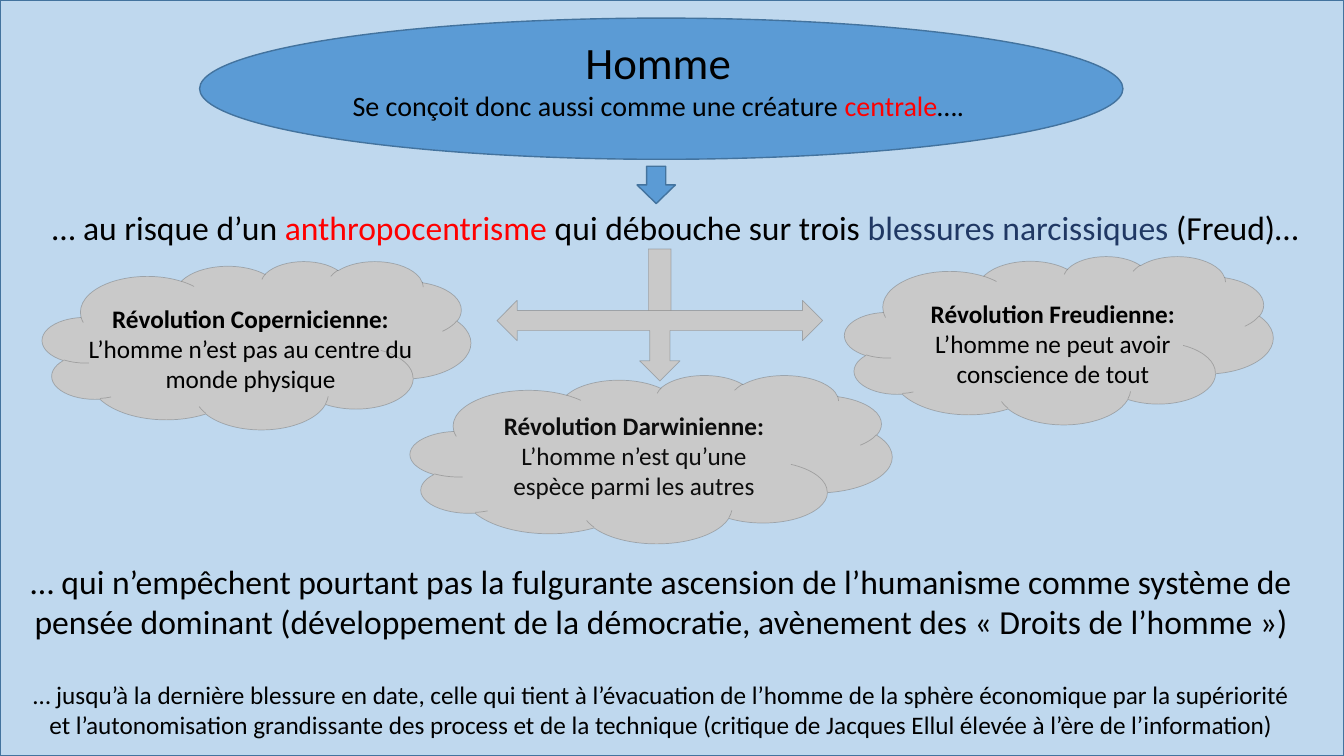
from lxml import etree
from pptx import Presentation
from pptx.dml.color import RGBColor
from pptx.enum.shapes import MSO_SHAPE as Preset
from pptx.enum.text import MSO_ANCHOR as Anchor, MSO_AUTO_SIZE as AutoSize, PP_ALIGN as Align
from pptx.oxml.ns import qn
from pptx.util import Inches, Pt

WIDTH, HEIGHT = Inches(13.33), Inches(7.5)
FONT = "Calibri"
COLORS = {
    "blue": "5B9BD5", "blue line": "43739E", "grey": "C9C9C9", "grey line": "595959",
    "black": "000000", "soft black": "0D0D0D", "red": "FF0000", "navy": "203864",
}
BLUE = ("blue", "blue line", 1)
GREY = ("grey", "grey line", 0.5)
CLOUD_HEIGHT = 22.27
LABEL_OFFSET = (2.63, 4.93)
LABEL_SIZE = (25.73, 13.47)


def color(name):
    return RGBColor.from_string(COLORS[name])


def box(left, top, width, height):
    """Turn percentages of the slide into lengths."""
    return [int(share * side / 100) for share, side in
            zip((left, top, width, height), (WIDTH, HEIGHT, WIDTH, HEIGHT))]


def set_alpha(fill_parent, percent):
    rgb = fill_parent.find(qn("a:solidFill")).find(qn("a:srgbClr"))
    etree.SubElement(rgb, qn("a:alpha")).set("val", str(percent * 1000))


def add_figure(slide, preset, area, style, flip=False, fill_alpha=None):
    fill, line, line_width = style
    shape = slide.shapes.add_shape(preset, *box(*area))
    shape.shadow.inherit = False
    shape.fill.solid()
    shape.fill.fore_color.rgb = color(fill)
    shape.line.color.rgb = color(line)
    shape.line.width = Pt(line_width)
    properties = shape.element.spPr
    if fill_alpha:
        set_alpha(properties, fill_alpha)
    if style is GREY:
        set_alpha(properties.find(qn("a:ln")), 37)
    if flip:
        properties.find(qn("a:xfrm")).set("flipV", "1")
    return shape


def write(frame, lines):
    """Fill a frame with centred lines: (size, bold, [(text, colour), ...])."""
    for index, (size, bold, pieces) in enumerate(lines):
        paragraph = frame.paragraphs[0] if index == 0 else frame.add_paragraph()
        paragraph.alignment = Align.CENTER
        paragraph.font.name = FONT
        paragraph.font.size = Pt(size)
        paragraph.font.bold = bold
        for text, name in pieces:
            run = paragraph.add_run()
            run.text = text
            run.font.color.rgb = color(name)


def add_text(slide, area, lines):
    frame = slide.shapes.add_textbox(*box(*area)).text_frame
    frame.word_wrap = True
    frame.auto_size = AutoSize.SHAPE_TO_FIT_TEXT
    write(frame, lines)


def place_title(slide, area, lines):
    title = slide.shapes.title
    title.left, title.top, title.width, title.height = box(*area)
    frame = title.text_frame
    frame.word_wrap = True
    frame.vertical_anchor = Anchor.TOP
    frame.auto_size = AutoSize.SHAPE_TO_FIT_TEXT
    write(frame, lines)
    # Bring the title in front of the ellipse
    title.element.getparent().append(title.element)


def revolution(name, wound, ink="black"):
    return [(18, True, [(f"Révolution {name}:", ink)]), (18, False, [(wound, ink)])]


def add_labelled_cloud(slide, left, top, lines):
    add_figure(slide, Preset.CLOUD, (left, top, 31.88, CLOUD_HEIGHT), GREY)
    across, down = LABEL_OFFSET
    add_text(slide, (left + across, top + down, *LABEL_SIZE), lines)


def main():
    presentation = Presentation()
    presentation.slide_width, presentation.slide_height = WIDTH, HEIGHT
    slide = presentation.slides.add_slide(presentation.slide_layouts.get_by_name("Title Only"))

    # Background and heading
    add_figure(slide, Preset.RECTANGLE, (0, 0, 100, 100), BLUE, fill_alpha=39)
    add_figure(slide, Preset.OVAL, (14.85, 2.4, 68.7, 18.67), BLUE)
    place_title(slide, (23.1, 3.87, 51.75, 13.07), [
        (32, False, [("Homme", "black")]),
        (20, False, [("Se conçoit donc aussi comme une créature ", "black"),
                     ("centrale", "red"), ("….", "black")]),
    ])

    # Risk that follows
    add_figure(slide, Preset.UP_ARROW, (47.4, 22, 2.85, 4.93), BLUE, flip=True)
    add_text(slide, (2.1, 26.67, 96.3, 6.67), [(24, False, [
        ("… au risque d’un ", "black"), ("anthropocentrisme ", "red"),
        ("qui débouche sur trois ", "black"), ("blessures narcissiques ", "navy"),
        ("(Freud)…", "black"),
    ])])

    # Three wounds
    add_figure(slide, Preset.UP_ARROW, (47.4, 32.93, 3.38, 12.13), GREY, flip=True)
    add_figure(slide, Preset.LEFT_RIGHT_UP_ARROW, (36.98, 39.73, 24.23, 10.67), GREY, flip=True)
    darwin = add_figure(slide, Preset.CLOUD, (30.53, 49.6, 35.85, CLOUD_HEIGHT), GREY)
    darwin.text_frame.vertical_anchor = Anchor.MIDDLE
    write(darwin.text_frame, revolution(
        "Darwinienne", "L’homme n’est qu’une espèce parmi les autres", "soft black"))
    add_labelled_cloud(slide, 3.15, 34.53, revolution(
        "Copernicienne", "L’homme n’est pas au centre du monde physique"))
    add_labelled_cloud(slide, 62.85, 33.87, revolution(
        "Freudienne", "L’homme ne peut avoir conscience de tout"))

    # Conclusions
    for top, height, size, text in (
        (73.47, 12.13, 24,
         "… qui n’empêchent pourtant pas la fulgurante ascension de l’humanisme comme "
         "système de pensée dominant (développement de la démocratie, avènement des "
         "« Droits de l’homme »)"),
        (89.2, 9.47, 18,
         "… jusqu’à la dernière blessure en date, celle qui tient à l’évacuation de l’homme "
         "de la sphère économique par la supériorité et l’autonomisation grandissante des "
         "process et de la technique (critique de Jacques Ellul élevée à l’ère de "
         "l’information)"),
    ):
        add_text(slide, (1.05, top, 96.3, height), [(size, False, [(text, "black")])])

    presentation.save("out.pptx")


if __name__ == "__main__":
    main()
